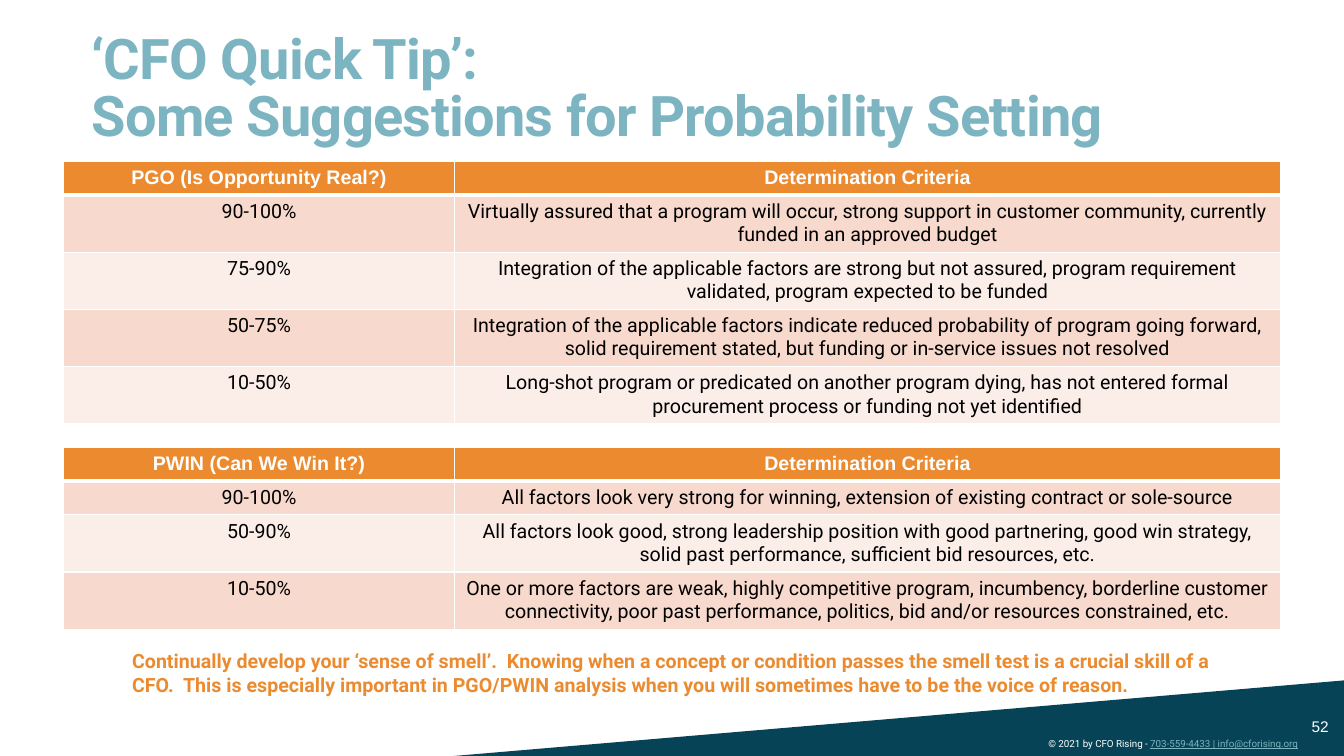
from lxml.etree import SubElement
from pptx import Presentation
from pptx.dml.color import RGBColor
from pptx.enum.shapes import MSO_SHAPE as Shape
from pptx.enum.text import MSO_ANCHOR as Anchor, PP_ALIGN as Align
from pptx.oxml.ns import qn
from pptx.util import Inches, Pt

WHITE = RGBColor(0xFF, 0xFF, 0xFF)
BLACK = RGBColor(0x00, 0x00, 0x00)
NAVY = RGBColor(0x07, 0x43, 0x56)
TEAL = RGBColor(0x7C, 0xB4, 0xC1)
LINK_TEAL = RGBColor(0x7C, 0xB4, 0xC0)
ORANGE = RGBColor(0xEB, 0x8A, 0x2F)
TIP_ORANGE = RGBColor(0xEB, 0x8B, 0x30)
BANDS = [RGBColor(0xF7, 0xDA, 0xCD), RGBColor(0xFB, 0xED, 0xE8)]

COLUMN_WIDTHS = [3.88, 8.19]
SINGLE_ROW, DOUBLE_ROW = 0.32, 0.56
LINE_CAPACITY = 90

PGO = [
    ("PGO (Is Opportunity Real?)", "Determination Criteria"),
    ("90-100%", "Virtually assured that a program will occur, strong support in "
     "customer community, currently funded in an approved budget"),
    ("75-90%", "Integration of the applicable factors are strong but not assured, "
     "program requirement validated, program expected to be funded"),
    ("50-75%", "Integration of the applicable factors indicate reduced probability of "
     "program going forward, solid requirement stated, but funding or in-service "
     "issues not resolved"),
    ("10-50%", "Long-shot program or predicated on another program dying, has not "
     "entered formal procurement process or funding not yet identified"),
]
PWIN = [
    ("PWIN (Can We Win It?)", "Determination Criteria"),
    ("90-100%", "All factors look very strong for winning, extension of existing "
     "contract or sole-source"),
    ("50-90%", "All factors look good, strong leadership position with good partnering, "
     "good win strategy, solid past performance, sufficient bid resources, etc."),
    ("10-50%", "One or more factors are weak, highly competitive program, incumbency, "
     "borderline customer connectivity, poor past performance, politics, bid and/or "
     "resources constrained, etc."),
]
TIP = ("Continually develop your ‘sense of smell’.  Knowing when a concept or condition "
       "passes the smell test is a crucial skill of a CFO.  This is especially important "
       "in PGO/PWIN analysis when you will sometimes have to be the voice of reason.")


def set_font(font, name, size, color, bold=False):
    font.name, font.size, font.bold = name, Pt(size), bold
    font.color.rgb = color


def add_text(slide, left, top, width, height, anchor=Anchor.TOP):
    frame = slide.shapes.add_textbox(
        Inches(left), Inches(top), Inches(width), Inches(height)).text_frame
    frame.word_wrap = True
    frame.vertical_anchor = anchor
    return frame


def add_title(slide, left, top, width, height):
    title = add_text(slide, left, top, width, height, Anchor.BOTTOM).paragraphs[0]
    title.text = "‘CFO Quick Tip’:\vSome Suggestions for Probability Setting"
    title.line_spacing = 0.85
    set_font(title.font, "Roboto", 40, TEAL, True)
    for run in title.runs:
        run.font._element.set("spc", "-50")


def add_borders(cell, row):
    widths = {"L": 1, "R": 1, "T": 3 if row == 1 else 1, "B": 3 if row == 0 else 1}
    properties = cell._tc.get_or_add_tcPr()
    for side, width in widths.items():
        border = SubElement(properties, qn(f"a:ln{side}"), w=str(Pt(width)))
        fill = SubElement(border, qn("a:solidFill"))
        SubElement(fill, qn("a:srgbClr"), val=str(WHITE))


def add_criteria(slide, left, top, rows):
    heights = [DOUBLE_ROW if len(criteria) > LINE_CAPACITY else SINGLE_ROW
               for _, criteria in rows]
    table = slide.shapes.add_table(
        len(rows), len(COLUMN_WIDTHS), Inches(left), Inches(top),
        Inches(sum(COLUMN_WIDTHS)), Inches(sum(heights))).table
    for column, width in zip(table.columns, COLUMN_WIDTHS):
        column.width = Inches(width)
    for r, (texts, height) in enumerate(zip(rows, heights)):
        table.rows[r].height = Inches(height)
        for c, text in enumerate(texts):
            cell = table.cell(r, c)
            add_borders(cell, r)
            cell.fill.solid()
            cell.fill.fore_color.rgb = BANDS[(r - 1) % 2] if r else ORANGE
            cell.text = text
            entry = cell.text_frame.paragraphs[0]
            entry.alignment = Align.CENTER
            if r:
                set_font(entry.font, "Roboto", 14, BLACK)
            else:
                set_font(entry.font, "Arial", 14, WHITE, True)


def add_tip(slide, left, top, width, height):
    frame = add_text(slide, left, top, width, height)
    frame.margin_left = frame.margin_right = 0
    tip = frame.paragraphs[0]
    tip.text = TIP
    tip.space_after = Pt(2)
    set_font(tip.font, "Roboto", 14, TIP_ORANGE, True)


def add_footer(slide, left, top, width, height):
    wedge = slide.shapes.add_shape(
        Shape.RIGHT_TRIANGLE, Inches(left), Inches(top), Inches(width), Inches(height))
    wedge._element.spPr.xfrm.set("flipH", "1")
    wedge.shadow.inherit = False
    wedge.fill.solid()
    wedge.fill.fore_color.rgb = NAVY
    wedge.line.fill.background()

    right, bottom = left + width, top + height
    notice = add_text(slide, right - 3.03, bottom - 0.23, 2.8, 0.23).paragraphs[0]
    parts = [("© 2021\u00a0by CFO Rising - ", WHITE, False),
             ("703-559-4433 |\u00a0info@cforising.org", LINK_TEAL, True)]
    for text, color, underlined in parts:
        run = notice.add_run()
        run.text = text
        set_font(run.font, "Roboto", 7, color)
        run.font.underline = underlined

    number = add_text(slide, right - 0.42, bottom - 0.49, 0.42, 0.4, Anchor.MIDDLE)
    number.paragraphs[0].text = "52"
    set_font(number.paragraphs[0].font, "Arial", 11, WHITE)


def main():
    deck = Presentation()
    deck.slide_width, deck.slide_height = Inches(13.33), Inches(7.5)
    slide = deck.slides.add_slide(deck.slide_layouts[6])
    add_footer(slide, 4.5, 6.75, 8.83, 0.75)
    add_title(slide, 0.81, 0.61, 11.15, 0.91)
    add_tip(slide, 1.31, 6.39, 10.91, 0.5)
    add_criteria(slide, 0.63, 1.6, PGO)
    add_criteria(slide, 0.63, 4.44, PWIN)
    deck.save("out.pptx")


if __name__ == "__main__":
    main()
